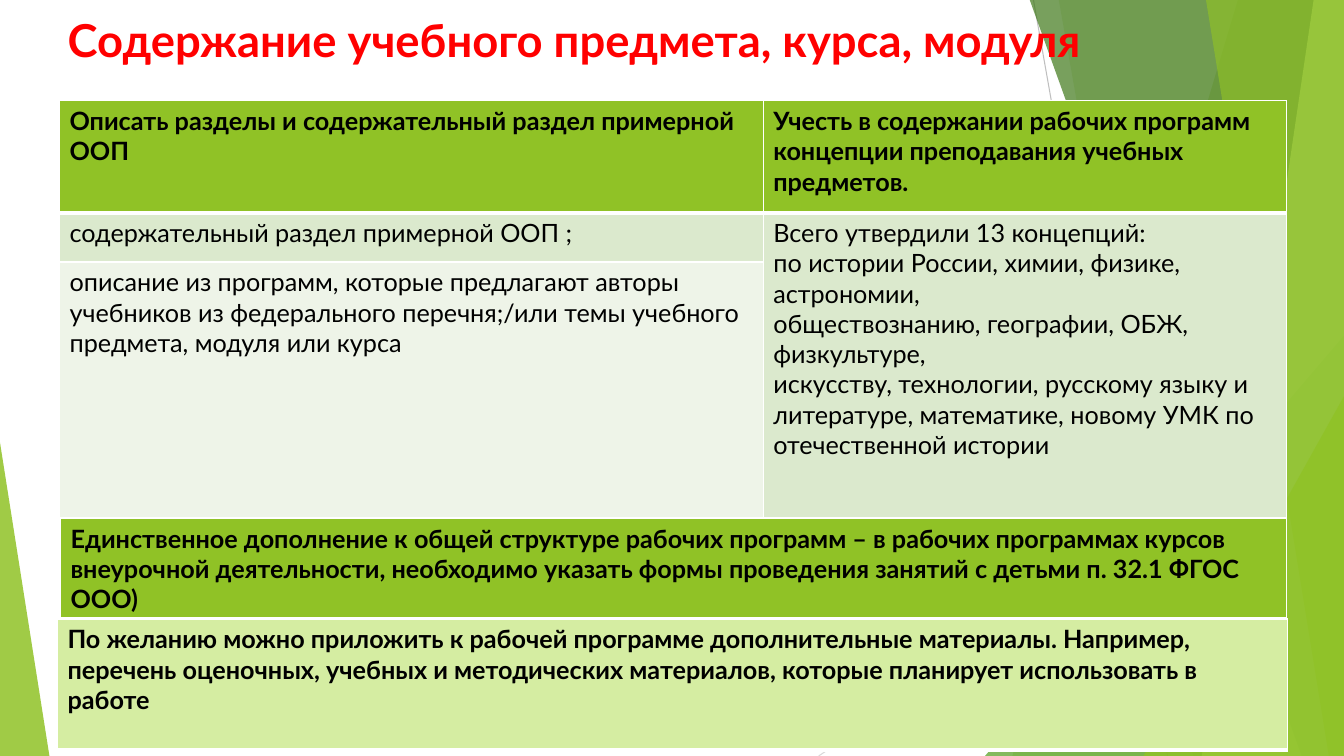
from lxml import etree
from pptx import Presentation
from pptx.dml.color import RGBColor
from pptx.enum.shapes import MSO_CONNECTOR, MSO_SHAPE
from pptx.enum.text import MSO_ANCHOR, MSO_AUTO_SIZE, PP_ALIGN
from pptx.oxml.ns import qn
from pptx.util import Inches, Pt

STRAIGHT = MSO_CONNECTOR.STRAIGHT
TRIANGLE = MSO_SHAPE.ISOSCELES_TRIANGLE
LEFT, TOP, NO_FIT = PP_ALIGN.LEFT, MSO_ANCHOR.TOP, MSO_AUTO_SIZE.NONE

W, H = 13.33, 7.5
FONT = "Lato"
GREEN, PALE, PALEST, LIME = "90C226", "DBE9CD", "EEF4E8", "D5EDA2"
BLACK, WHITE, RED = "000000", "FFFFFF", "FF0000"
TITLE_FORMAT = {"name": FONT, "size": Pt(32.4), "bold": True}
HEAD_FORMAT = {"name": FONT, "size": Pt(18), "bold": True}
BODY_FORMAT = {**HEAD_FORMAT, "bold": False}

TITLE = "Содержание учебного предмета, курса, модуля"
TITLE_BOX = (0.57, 0.07, 11.48, 0.82)

# Each cell: paragraphs, fill, text format; None continues a merged cell
CONTENT_ROWS = [
    [(["Описать разделы и содержательный раздел примерной ООП"], GREEN, HEAD_FORMAT),
     (["Учесть в содержании рабочих программ",
       "концепции преподавания учебных предметов."], GREEN, HEAD_FORMAT)],
    [(["содержательный раздел примерной ООП ;"], PALE, BODY_FORMAT),
     (["Всего утвердили 13 концепций:",
       "по истории России, химии, физике, астрономии,",
       "обществознанию, географии, ОБЖ, физкультуре,",
       "искусству, технологии, русскому языку и",
       "литературе, математике, новому УМК по",
       "отечественной истории"], PALE, BODY_FORMAT)],
    [(["описание из программ, которые предлагают авторы учебников из федерального "
       "перечня;/или темы учебного предмета, модуля или курса"], PALEST, BODY_FORMAT),
     None],
]
ADDITION = [[(["Единственное дополнение к общей структуре рабочих программ – в рабочих "
               "программах курсов внеурочной деятельности, необходимо указать формы "
               "проведения занятий с детьми п. 32.1 ФГОС ООО)"], GREEN, HEAD_FORMAT)]]
OPTIONAL = [[(["По желанию можно приложить к рабочей программе дополнительные материалы. "
               "Например, перечень оценочных, учебных и методических материалов, которые "
               "планирует использовать в работе"], LIME, HEAD_FORMAT)]]

# left, top, column widths, row heights, cells
TABLES = [
    (0.59, 1, [6.98, 5.19], [1.11, 0.49, 2.54], CONTENT_ROWS),
    (0.6, 5.14, [12.16], [1], ADDITION),
    (0.57, 6.14, [12.2], [1.3], OPTIONAL),
]

RAYS = [((10.25, 0), (11.58, H), "BFBFBF"), ((W, 4.03), (8.12, H), "D9D9D9")]
# Facets from back to front. Band: top x, bottom x, reaching the right edge.
# Corner: left, top, width, apex position, standing on the bottom edge.
FACETS = [
    ("band", (12.28, 10.04), GREEN, 30),
    ("band", (10.5, 11.83), GREEN, 20),
    ("corner", (9.77, 3.33, 3.56, 1), "54A021", 72),
    ("band", (10.21, 12.91), "3F7819", 70),
    ("band", (13.03, 11.92), "C0E474", 70),
    ("band", (11.96, 13.18), GREEN, 65),
    ("corner", (11.34, 3.93, 1.99, 1), GREEN, 80),
    ("corner", (0, 4.39, 0.49, 0), GREEN, 85),
]


def rgb(value):
    return RGBColor.from_string(value)


def inches(*lengths):
    return [Inches(length) for length in lengths]


def write(frame, paragraphs, formats, color):
    for index, words in enumerate(paragraphs):
        paragraph = frame.add_paragraph() if index else frame.paragraphs[0]
        paragraph.alignment = LEFT
        run = paragraph.add_run()
        run.text = words
        for key, value in formats.items():
            setattr(run.font, key, value)
        run.font.color.rgb = rgb(color)


def add_ray(shapes, start, end, color):
    ray = shapes.add_connector(STRAIGHT, *inches(*start, *end))
    ray.line.color.rgb = rgb(color)
    ray.line.width = Pt(0.75)
    etree.SubElement(ray._element.spPr, qn("a:effectLst"))


def add_facet(shapes, kind, geometry, color, opacity):
    if kind == "band":
        top_x, bottom_x = geometry
        builder = shapes.build_freeform(*inches(top_x, -0.01))
        corners = [(W, -0.01), (W, H), (bottom_x, H)]
        builder.add_line_segments([inches(*corner) for corner in corners])
        facet = builder.convert_to_shape()
    else:
        left, top, width, apex = geometry
        facet = shapes.add_shape(TRIANGLE, *inches(left, top, width, H - top))
        facet.adjustments[0] = apex
    facet.shadow.inherit = False
    facet.line.fill.background()
    facet.fill.solid()
    facet.fill.fore_color.rgb = rgb(color)
    tint = facet._element.spPr.find(qn("a:solidFill"))[0]
    etree.SubElement(tint, qn("a:alpha"), val=str(opacity * 1000))


def set_borders(cell, widths):
    """Draw white borders; widths in points for left, right, top, bottom."""
    properties = cell._tc.get_or_add_tcPr()
    for side, width in zip("LRTB", widths):
        border = etree.SubElement(properties, qn(f"a:ln{side}"), w=str(Pt(width)))
        fill = etree.SubElement(border, qn("a:solidFill"))
        etree.SubElement(fill, qn("a:srgbClr"), val=WHITE)


def add_content_table(shapes, left, top, columns, heights, rows):
    table = shapes.add_table(len(rows), len(columns),
                             *inches(left, top, sum(columns), sum(heights))).table
    table.first_row = table.horz_banding = False
    for column, width in zip(table.columns, columns):
        column.width = Inches(width)
    for row, height in zip(table.rows, heights):
        row.height = Inches(height)
    for r, row in enumerate(rows):
        for c, content in enumerate(row):
            cell = table.cell(r, c)
            set_borders(cell, (1, 1, 3 if r == 1 else 1, 3 if r == 0 else 1))
            if content is None:
                table.cell(r - 1, c).merge(cell)
                continue
            paragraphs, fill, formats = content
            cell.fill.solid()
            cell.fill.fore_color.rgb = rgb(fill)
            write(cell.text_frame, paragraphs, formats, BLACK)


def main():
    deck = Presentation()
    deck.slide_width, deck.slide_height = inches(W, H)
    slide = deck.slides.add_slide(deck.slide_layouts[5])
    shapes = slide.shapes

    for ray in RAYS:
        add_ray(shapes, *ray)
    for facet in FACETS:
        add_facet(shapes, *facet)

    title = shapes.title
    title.left, title.top, title.width, title.height = inches(*TITLE_BOX)
    frame = title.text_frame
    frame.word_wrap, frame.auto_size, frame.vertical_anchor = True, NO_FIT, TOP
    write(frame, [TITLE], TITLE_FORMAT, RED)
    shapes._spTree.append(title._element)  # in front of the facets

    for table in TABLES:
        add_content_table(shapes, *table)
    deck.save("out.pptx")


if __name__ == "__main__":
    main()
